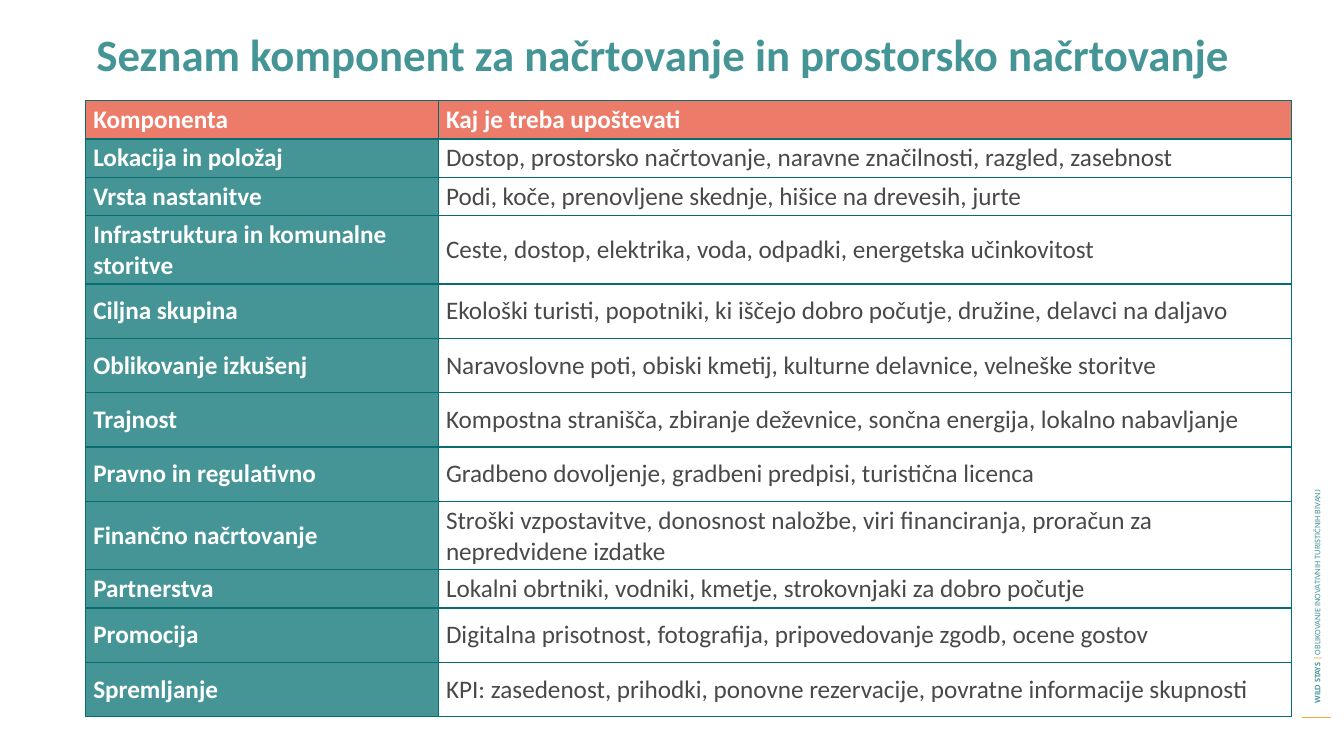
import pptx
import pptx.util
import pptx.oxml
import pptx.oxml.ns
import pptx.dml.color
import pptx.enum.text
import pptx.enum.shapes

Cm = pptx.util.Cm
Pt = pptx.util.Pt

INK = {"teal": "459597", "coral": "EC7C69", "white": "FFFFFF",
       "gray": "494949", "edge": "086D6E", "gold": "FBA63D"}
FONT = "Calibri"
TITLE = "Seznam komponent za načrtovanje in prostorsko načrtovanje"
SIDE = [("WILD STAYS ", "teal", True), ("| ", "gold", True),
        ("OBLIKOVANJE INOVATIVNIH TURISTIČNIH BIVANJ", "teal", False)]
LOW, HIGH = 0.79, 1.37
COLS = (8.89, 21.49)
ROWS = [
    (LOW, "Komponenta", "Kaj je treba upoštevati"),
    (LOW, "Lokacija in položaj",
     "Dostop, prostorsko načrtovanje, naravne značilnosti, razgled, zasebnost"),
    (LOW, "Vrsta nastanitve",
     "Podi, koče, prenovljene skednje, hišice na drevesih, jurte"),
    (HIGH, "Infrastruktura in komunalne storitve",
     "Ceste, dostop, elektrika, voda, odpadki, energetska učinkovitost"),
    (HIGH, "Ciljna skupina",
     "Ekološki turisti, popotniki, ki iščejo dobro počutje, družine, delavci na daljavo"),
    (HIGH, "Oblikovanje izkušenj",
     "Naravoslovne poti, obiski kmetij, kulturne delavnice, velneške storitve"),
    (HIGH, "Trajnost",
     "Kompostna stranišča, zbiranje deževnice, sončna energija, lokalno nabavljanje"),
    (HIGH, "Pravno in regulativno",
     "Gradbeno dovoljenje, gradbeni predpisi, turistična licenca"),
    (HIGH, "Finančno načrtovanje",
     "Stroški vzpostavitve, donosnost naložbe, viri financiranja, "
     "proračun za nepredvidene izdatke"),
    (LOW, "Partnerstva",
     "Lokalni obrtniki, vodniki, kmetje, strokovnjaki za dobro počutje"),
    (HIGH, "Promocija",
     "Digitalna prisotnost, fotografija, pripovedovanje zgodb, ocene gostov"),
    (HIGH, "Spremljanje",
     "KPI: zasedenost, prihodki, ponovne rezervacije, povratne informacije skupnosti"),
]


def color(name):
    return pptx.dml.color.RGBColor.from_string(INK[name])


def style(run, size, ink, bold):
    run.font.name = FONT
    run.font.size = Pt(size)
    run.font.bold = bold
    run.font.color.rgb = color(ink)


def add_box(slide, left, top, width, height):
    box = slide.shapes.add_textbox(Cm(left), Cm(top), Cm(width), Cm(height))
    box.text_frame.word_wrap = True
    return box


def add_edges(cell):
    """Draw a thin line on all four sides of a cell."""
    props = cell._tc.get_or_add_tcPr()
    for place, side in enumerate("LRTB"):
        props.insert(place, pptx.oxml.parse_xml(
            f'<a:ln{side} {pptx.oxml.ns.nsdecls("a")} w="12700"><a:solidFill>'
            f'<a:srgbClr val="{INK["edge"]}"/></a:solidFill></a:ln{side}>'))


def fill_cell(cell, text, back, ink, bold):
    cell.text_frame.text = text
    style(cell.text_frame.paragraphs[0].runs[0], 18, ink, bold)
    cell.vertical_anchor = pptx.enum.text.MSO_ANCHOR.MIDDLE
    cell.margin_left = cell.margin_right = Cm(0.19)
    cell.margin_top = cell.margin_bottom = Cm(0.1)
    if back:
        cell.fill.solid()
        cell.fill.fore_color.rgb = color(back)
    else:
        cell.fill.background()
    add_edges(cell)


def add_grid(slide):
    heights = [row[0] for row in ROWS]
    table = slide.shapes.add_table(
        len(ROWS), len(COLS), Cm(2.16), Cm(2.54),
        Cm(sum(COLS)), Cm(sum(heights))).table
    table.first_row = table.horz_banding = False
    for col, width in zip(table.columns, COLS):
        col.width = Cm(width)
    for r, (height, *texts) in enumerate(ROWS):
        table.rows[r].height = Cm(height)
        for c, text in enumerate(texts):
            if r == 0:
                look = ("coral", "white", True)
            elif c == 0:
                look = ("teal", "white", True)
            else:
                look = (None, "gray", False)
            fill_cell(table.cell(r, c), text, *look)


def add_side(slide):
    rule = slide.shapes.add_connector(
        pptx.enum.shapes.MSO_CONNECTOR.STRAIGHT,
        Cm(32.82), Cm(18.08), Cm(33.55), Cm(18.08))
    rule.line.color.rgb = color("gold")
    rule.line.width = Pt(0.75)
    rule._element.spPr.append(pptx.oxml.parse_xml(
        f'<a:effectLst {pptx.oxml.ns.nsdecls("a")}/>'))
    box = add_box(slide, 25.86, 10.39, 14.66, 0.51)
    box.rotation = 270
    box.text_frame.vertical_anchor = pptx.enum.text.MSO_ANCHOR.MIDDLE
    for text, ink, bold in SIDE:
        run = box.text_frame.paragraphs[0].add_run()
        run.text = text
        style(run, 6, ink, bold)


def main():
    deck = pptx.Presentation()
    deck.slide_width, deck.slide_height = Cm(33.87), Cm(19.05)
    slide = deck.slides.add_slide(deck.slide_layouts[6])
    add_side(slide)
    title = add_box(slide, 2.18, 0.56, 29.49, 2.24)
    title.text_frame.text = TITLE
    style(title.text_frame.paragraphs[0].runs[0], 32, "teal", True)
    add_grid(slide)
    deck.save("out.pptx")


if __name__ == "__main__":
    main()
